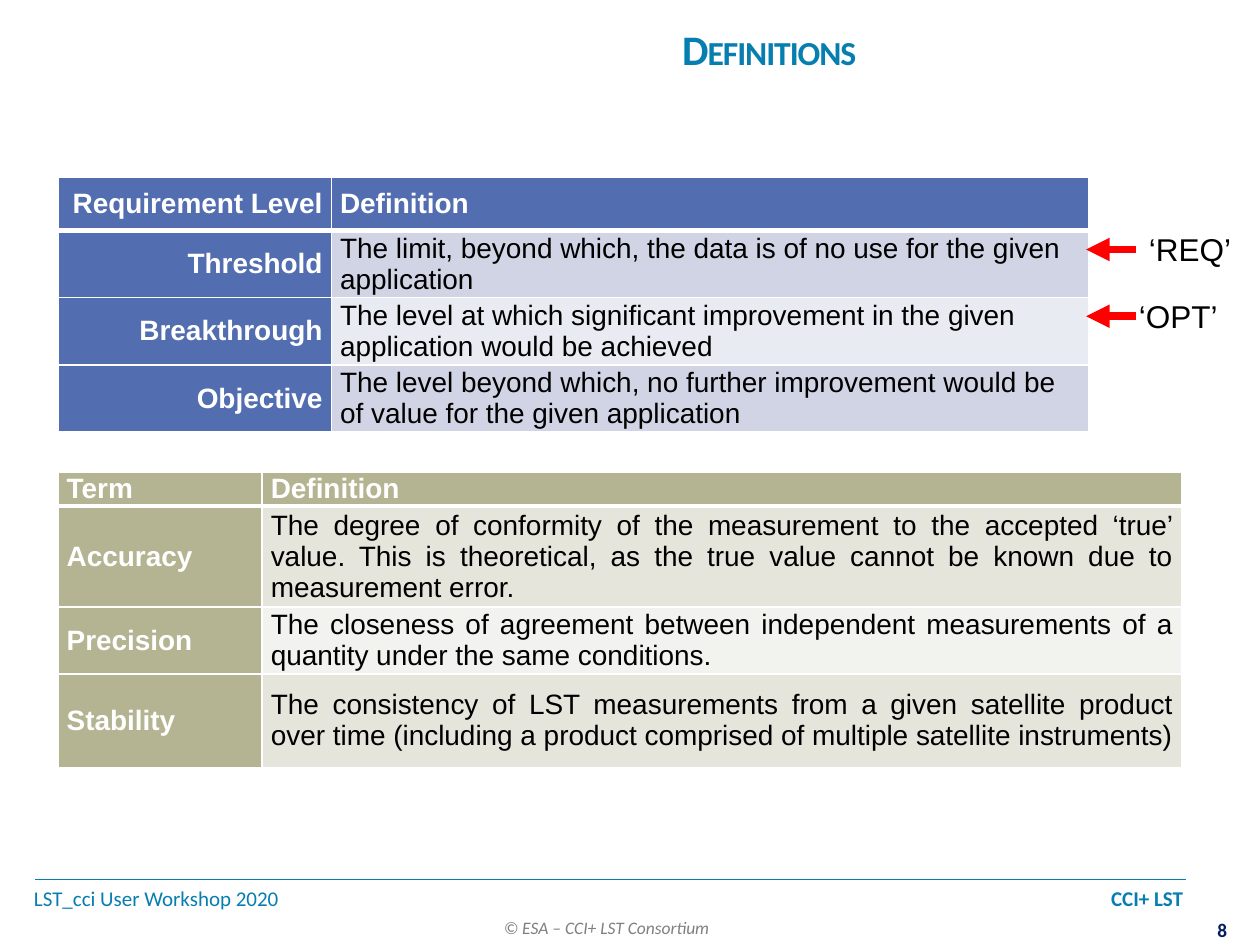
from dataclasses import dataclass

from lxml import etree
from pptx import Presentation
from pptx import util as u
from pptx.dml.color import RGBColor
from pptx.enum import shapes, text
from pptx.oxml.ns import qn

COLOURS = {
    "white": "FFFFFF", "black": "000000", "red": "FF0000",
    "teal": "067EB0", "navy": "041E5D", "grey": "808080",
    "blue": "526DB0", "blue_mid": "D1D4E4", "blue_pale": "E9EBF2",
    "olive": "B4B392", "olive_mid": "E5E5DC", "olive_pale": "F2F2EE",
}
ALIGN = text.PP_ALIGN
# The slide is a grid of 100 columns by 75 rows
COLUMNS, ROWS = 100, 75


def grid(count: float) -> int:
    return u.Inches(count / 10)


@dataclass
class Style:
    size: float
    colour: str
    font: str = "Calibri"
    bold: bool = False
    italic: bool = False


@dataclass
class Label:
    words: list[tuple[str, Style]]
    place: tuple[float, float, float, float]
    align: ALIGN = ALIGN.LEFT
    inset: tuple[float, float] = (1, 0.5)
    wrap: bool = True
    anchor: text.MSO_ANCHOR = text.MSO_ANCHOR.TOP


@dataclass
class Definitions:
    place: tuple[float, float]
    widths: tuple[float, float]
    heights: tuple[float, ...]
    head: str
    bands: tuple[str, str]
    aligns: tuple[ALIGN, ALIGN]
    rows: list[tuple[str, str]]


def rgb(name: str) -> RGBColor:
    return RGBColor.from_string(COLOURS[name])


def add_span(para, words: str, style: Style):
    span = para.add_run()
    span.text = words
    font = span.font
    font.size, font.name = u.Pt(style.size), style.font
    font.bold, font.italic = style.bold, style.italic
    font.color.rgb = rgb(style.colour)
    return span


def add_label(page, label: Label):
    box = page.shapes.add_textbox(*map(grid, label.place))
    frame = box.text_frame
    frame.word_wrap = label.wrap
    frame.vertical_anchor = label.anchor
    frame.margin_left = frame.margin_right = grid(label.inset[0])
    frame.margin_top = frame.margin_bottom = grid(label.inset[1])
    para = frame.paragraphs[0]
    para.alignment = label.align
    for words, style in label.words:
        add_span(para, words, style)
    return para


def add_line(page, start, end, colour: str, width: float, arrow: bool = False) -> None:
    line = page.shapes.add_connector(
        shapes.MSO_CONNECTOR.STRAIGHT, *map(grid, start + end))
    line.line.color.rgb = rgb(colour)
    line.line.width = u.Pt(width)
    if arrow:
        etree.SubElement(line.line._get_or_add_ln(), qn("a:tailEnd"), type="triangle")
    etree.SubElement(line._element.spPr, qn("a:effectLst"))


def add_borders(cell, widths: dict[str, float]) -> None:
    properties = cell._tc.get_or_add_tcPr()
    for position, (side, width) in enumerate(widths.items()):
        edge = etree.Element(qn(f"a:ln{side}"), w=str(u.Pt(width)))
        fill = etree.SubElement(edge, qn("a:solidFill"))
        etree.SubElement(fill, qn("a:srgbClr"), val=COLOURS["white"])
        properties.insert(position, edge)


def add_definitions(page, data: Definitions) -> None:
    table = page.shapes.add_table(
        len(data.rows), 2, *map(grid, data.place),
        grid(sum(data.widths)), grid(sum(data.heights))).table
    for column, width in zip(table.columns, data.widths):
        column.width = grid(width)
    for r, (row, height) in enumerate(zip(table.rows, data.heights)):
        row.height = grid(height)
        for c, words in enumerate(data.rows[r]):
            cell = table.cell(r, c)
            heading = r == 0 or c == 0
            cell.fill.solid()
            cell.fill.fore_color.rgb = rgb(data.head if heading else data.bands[(r - 1) % 2])
            add_borders(cell, {"L": 1, "R": 1, "T": 3 if r == 1 else 1,
                               "B": 3 if r == 0 else 1})
            cell.vertical_anchor = text.MSO_ANCHOR.MIDDLE
            cell.margin_left = cell.margin_right = grid(0.7)
            cell.margin_top = cell.margin_bottom = 0
            para = cell.text_frame.paragraphs[0]
            para.alignment = data.aligns[c]
            colour = "white" if heading else "black"
            add_span(para, words, Style(16, colour, "Arial", bold=heading))


LEVELS = Definitions(
    (4.6, 14.1), (21.7, 60.1), (4.2, 4.9, 4.9, 4.9),
    "blue", ("blue_mid", "blue_pale"), (ALIGN.RIGHT, ALIGN.LEFT),
    [("Requirement Level", "Definition"),
     ("Threshold", "The limit, beyond which, the data is of no use for the given application"),
     ("Breakthrough", "The level at which significant improvement in the given "
      "application would be achieved"),
     ("Objective", "The level beyond which, no further improvement would be of value "
      "for the given application")])

TERMS = Definitions(
    (4.6, 37.5), (16.2, 73), (2.45, 7.4, 4.9, 7.4),
    "olive", ("olive_mid", "olive_pale"), (ALIGN.JUSTIFY, ALIGN.JUSTIFY),
    [("Term", "Definition"),
     ("Accuracy", "The degree of conformity of the measurement to the accepted ‘true’ "
      "value. This is theoretical, as the true value cannot be known due to "
      "measurement error."),
     ("Precision", "The closeness of agreement between independent measurements of a "
      "quantity under the same conditions."),
     ("Stability", "The consistency of LST measurements from a given satellite product "
      "over time (including a product comprised of multiple satellite instruments)")])


def main() -> None:
    deck = Presentation()
    deck.slide_width, deck.slide_height = grid(COLUMNS), grid(ROWS)
    page = deck.slides.add_slide(deck.slide_layouts[6])

    # Footer: workshop and project share one line, split by a right tab
    footer = add_label(page, Label(
        [("LST_cci User Workshop 2020\t", Style(12, "teal")),
         ("CCI+ LST", Style(12, "teal", bold=True))],
        (2.7, 69.8, 91.4, 3), inset=(0, 0.5)))
    tabs = etree.SubElement(footer._p.get_or_add_pPr(), qn("a:tabLst"))
    etree.SubElement(tabs, qn("a:tab"), pos=str(grid(91.2)), algn="r")
    add_line(page, (2.8, 69.8), (94.1, 69.8), "teal", 1)
    add_label(page, Label(
        [("© ESA – CCI+ LST Consortium", Style(10, "grey", italic=True))],
        (39, 72.3, 18.6, 2.7), wrap=False))
    add_label(page, Label(
        [("8", Style(11, "navy", bold=True))],
        (95.7, 72.9, 2.6, 1.9), ALIGN.CENTER, (0, 0), wrap=False))

    # Title in small capitals, slightly tightened
    title = add_label(page, Label(
        [("Definitions", Style(24, "teal", bold=True))],
        (35, 0.5, 51.2, 6.7), ALIGN.CENTER, anchor=text.MSO_ANCHOR.MIDDLE))
    letters = title.runs[0]._r.get_or_add_rPr()
    letters.set("cap", "small")
    letters.set("spc", "-60")

    # Tables
    for data in (LEVELS, TERMS):
        add_definitions(page, data)

    # Tags with arrows pointing at the first two levels
    for words, left, middle in (("‘REQ’", 90.2, 19.8), ("‘OPT’", 89.4, 25.1)):
        add_label(page, Label([(words, Style(18, "black", "Arial"))],
                              (left, middle - 2, 9.5, 4)))
        add_line(page, (90.2, middle), (86.2, middle), "red", 4.5, arrow=True)

    deck.save("out.pptx")


if __name__ == "__main__":
    main()
